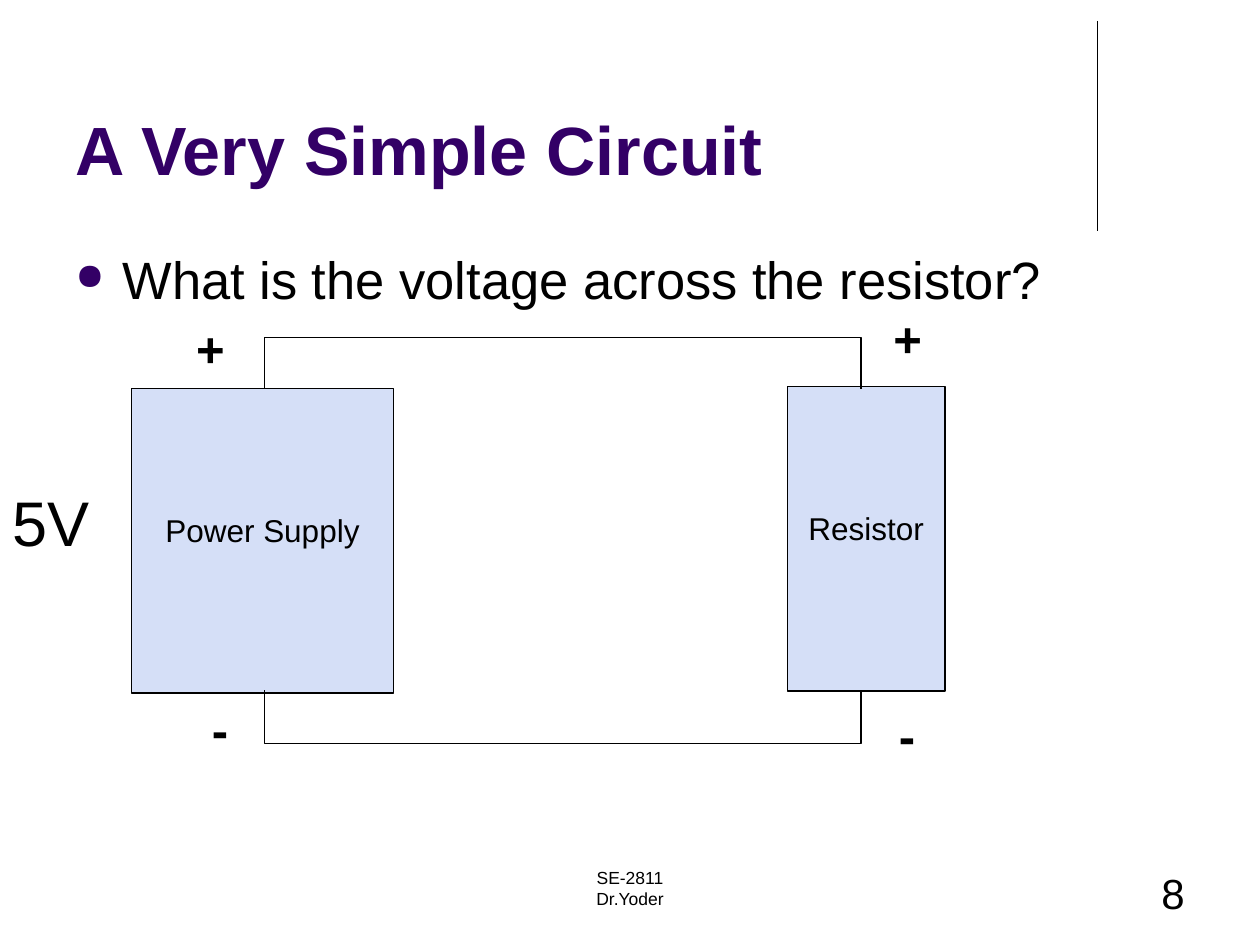
import pptx
import pptx.util
import pptx.dml.color
import pptx.enum.shapes
import pptx.enum.text
import pptx.oxml
import pptx.oxml.ns
from lxml import etree

Pt = pptx.util.Pt
RGBColor = pptx.dml.color.RGBColor
ALIGN = pptx.enum.text.PP_ALIGN
ANCHOR = pptx.enum.text.MSO_ANCHOR

BLACK = RGBColor(0x00, 0x00, 0x00)
PURPLE = RGBColor(0x33, 0x00, 0x66)
PALE_BLUE = RGBColor(0xD5, 0xDF, 0xF7)
FONT = "Arial"
LINE_WIDTH = 0.75

# Content: places are left, top, width, height in points
TITLE = ("A Very Simple Circuit", (36, 9.5, 594, 102))
QUESTION = ("What is the voltage across the resistor?", (36, 137.5, 648, 345))
FOOTER = (["SE-2811", "Dr.Yoder"], (246, 492, 228, 36))
SLIDE_NUMBER = ("8", (516, 492, 168, 36))
COMPONENTS = [
    ("Power Supply", (75, 222, 150, 174)),
    ("Resistor", (450, 221, 90, 174)),
]
LABEL_DROP = 70  # from the top of a component to its label
WIRE_LEFT, WIRE_RIGHT = 151, 492
WIRES = [(222, 193), (394.5, 425)]  # y at the components, y of the long run
SIGNS = [
    ("+", (105, 178.5, 31, 41)),
    ("+", (503.5, 173, 31, 41)),
    ("-", (114, 396, 24, 41)),
    ("-", (506.5, 399.5, 24, 41)),
]
VOLTAGE = ("5V", (0, 273, 59, 51))

presentation = pptx.Presentation()
presentation.slide_width, presentation.slide_height = Pt(720), Pt(540)
slide = presentation.slides.add_slide(presentation.slide_layouts[6])


def write(frame, lines, size, color=BLACK, bold=False, align=ALIGN.LEFT):
    for index, line in enumerate(lines):
        paragraph = frame.paragraphs[0] if index == 0 else frame.add_paragraph()
        paragraph.alignment = align
        run = paragraph.add_run()
        run.text = line
        run.font.name, run.font.size = FONT, Pt(size)
        run.font.bold, run.font.color.rgb = bold, color


def add_text(lines, place, size, anchor=ANCHOR.TOP, wrap=True, **style):
    frame = slide.shapes.add_textbox(*map(Pt, place)).text_frame
    frame.word_wrap, frame.vertical_anchor = wrap, anchor
    write(frame, lines, size, **style)
    return frame


def outline(shape):
    shape.shadow.inherit = False
    shape.line.color.rgb, shape.line.width = BLACK, Pt(LINE_WIDTH)


# Vertical rule beside the title
rule = slide.shapes.add_connector(
    pptx.enum.shapes.MSO_CONNECTOR.STRAIGHT, Pt(627), Pt(12), Pt(627), Pt(132))
rule.line.color.rgb, rule.line.width = BLACK, Pt(LINE_WIDTH)
etree.SubElement(rule._element.spPr, pptx.oxml.ns.qn("a:effectLst"))

# Title, question and footer
add_text([TITLE[0]], TITLE[1], 39, anchor=ANCHOR.BOTTOM, color=PURPLE, bold=True)
question = add_text([QUESTION[0]], QUESTION[1], 30)
properties = question.paragraphs[0]._p.get_or_add_pPr()
properties.set("marL", str(Pt(27)))
properties.set("indent", str(-Pt(27)))
namespace = pptx.oxml.ns.nsdecls("a")
for bullet_part in (
    f'<a:buClr {namespace}><a:srgbClr val="{PURPLE}"/></a:buClr>',
    f'<a:buSzPct {namespace} val="70000"/>',
    f'<a:buChar {namespace} char="●"/>',
):
    properties.append(pptx.oxml.parse_xml(bullet_part))
add_text(*FOOTER, 10, align=ALIGN.CENTER)
add_text([SLIDE_NUMBER[0]], SLIDE_NUMBER[1], 24, align=ALIGN.RIGHT)

# Components
for name, place in COMPONENTS:
    component = slide.shapes.add_shape(
        pptx.enum.shapes.MSO_SHAPE.RECTANGLE, *map(Pt, place))
    component.fill.solid()
    component.fill.fore_color.rgb = PALE_BLUE
    outline(component)
    frame = component.text_frame
    frame.word_wrap, frame.vertical_anchor = False, ANCHOR.TOP
    frame.margin_top = Pt(LABEL_DROP)
    write(frame, [name], 18, align=ALIGN.CENTER)

# Wires
for end_y, run_y in WIRES:
    builder = slide.shapes.build_freeform(Pt(WIRE_LEFT), Pt(end_y))
    builder.add_line_segments(
        [(Pt(WIRE_LEFT), Pt(run_y)), (Pt(WIRE_RIGHT), Pt(run_y)),
         (Pt(WIRE_RIGHT), Pt(end_y))], close=False)
    wire = builder.convert_to_shape()
    wire.fill.background()
    outline(wire)

# Polarity signs and voltage
for sign, place in SIGNS:
    add_text([sign], place, 28, wrap=False, bold=True)
add_text([VOLTAGE[0]], VOLTAGE[1], 36, wrap=False)

presentation.save("out.pptx")
